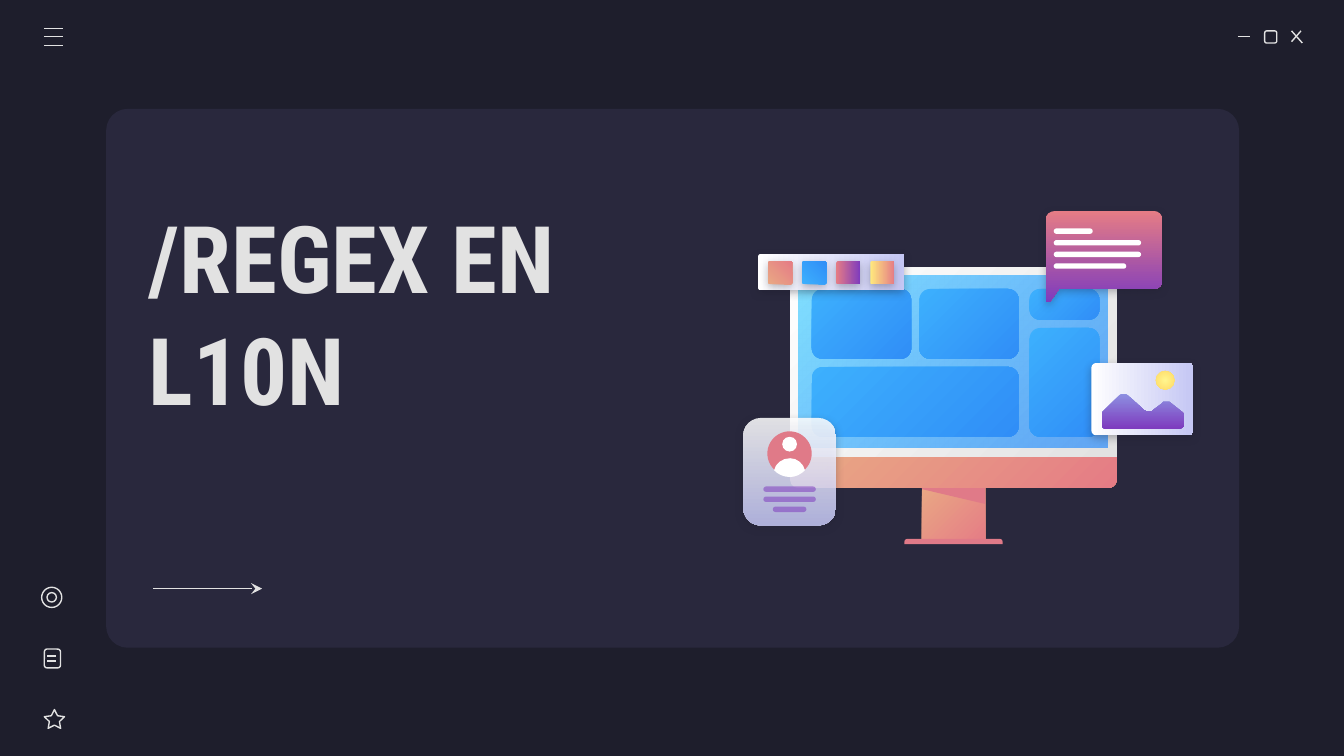
from lxml import etree
from pptx import Presentation
from pptx.dml.color import RGBColor
from pptx.enum.shapes import MSO_CONNECTOR, MSO_SHAPE
from pptx.enum.text import MSO_ANCHOR
from pptx.oxml import parse_xml
from pptx.oxml.ns import nsdecls, qn
from pptx.util import Inches, Pt

RECT, ROUND, OVAL = MSO_SHAPE.RECTANGLE, MSO_SHAPE.ROUNDED_RECTANGLE, MSO_SHAPE.OVAL
TAB, STAR = MSO_SHAPE.ROUND_2_SAME_RECTANGLE, MSO_SHAPE.STAR_5_POINT
STRAIGHT = MSO_CONNECTOR.STRAIGHT
WIDE = 10
HIGH = WIDE * 9 / 16

TITLE = "/REGEX EN L10N"
FONT = {"name": "Roboto Condensed", "size": Pt(50), "bold": True}
INK = {"back": "1E1E2C", "card": "29283D", "pale": "E2E2E2", "rose": "E07A88",
       "white": "FFFFFF", "plum": "7E3BBE"}
# Gradients: start, end, angle, start opacity, end opacity
BLEND = {"peach": ("E9A984", "E57C85", 45, 100, 100),
         "frame": ("FFFFFF", "E2E2E2", 45, 100, 100),
         "glass": ("80DFFF", "318FFA", 45, 100, 72),
         "blue": ("3DB0FD", "308EF7", 45, 100, 100),
         "dusk": ("E57C85", "7E3BBE", 90, 100, 100),
         "mist": ("FFFFFF", "C5C7F4", 90, 86, 86),
         "paper": ("FFFFFF", "C5C7F4", 90, 100, 100),
         "hill": ("8D90E1", "7E3BBE", 90, 100, 100),
         "dawn": ("FFEA7D", "E57C85", 90, 100, 100),
         "sun": ("FFF68E", "FFD966", None, 100, 100)}

# Tiles on the screen: first column, last column, first row, row count
COLS = [(6.04, 0.74), (6.84, 0.74), (7.66, 0.52)]
TOP, STEP, GAP = 2.15, 0.29, 0.06
TILES = [(0, 0, 0, 2), (0, 1, 2, 2), (1, 1, 0, 2), (2, 2, 0, 1), (2, 2, 1, 3)]
NOTES = [0.29, 0.65, 0.65, 0.54]
BARS = [0.39, 0.39, 0.25]
SWATCHES = ["peach", "blue", "dusk", "dawn"]

# Outlines: a pair is a straight side, six numbers are a curve
STAND = [(6.86, 3.61), (6.86, 3.64), (7.33, 3.75), (7.33, 3.61)]
BUBBLE = [(7.85, 1.57), (7.81, 1.57, 7.78, 1.6, 7.78, 1.64), (7.78, 2.24),
          (7.78, 2.25, 7.79, 2.25, 7.8, 2.25), (7.8, 2.25, 7.81, 2.25, 7.81, 2.25),
          (7.88, 2.15), (8.59, 2.15), (8.62, 2.15, 8.65, 2.12, 8.65, 2.09),
          (8.65, 1.64), (8.65, 1.6, 8.62, 1.57, 8.59, 1.57)]
BODY = [(5.88, 3.41), (5.82, 3.41, 5.77, 3.45, 5.76, 3.5),
        (5.79, 3.53, 5.83, 3.55, 5.88, 3.55), (5.92, 3.55, 5.96, 3.53, 5.99, 3.5),
        (5.98, 3.45, 5.93, 3.41, 5.88, 3.41)]
HILLS = [(8.36, 2.93), (8.35, 2.93, 8.34, 2.93, 8.33, 2.94), (8.21, 3.06),
         (8.2, 3.07, 8.2, 3.07, 8.2, 3.08), (8.2, 3.16),
         (8.2, 3.18, 8.21, 3.19, 8.23, 3.19), (8.77, 3.19),
         (8.79, 3.19, 8.81, 3.18, 8.81, 3.16), (8.81, 3.09),
         (8.81, 3.08, 8.8, 3.07, 8.8, 3.07), (8.7, 2.99),
         (8.69, 2.99, 8.68, 2.99, 8.67, 2.99), (8.66, 2.99, 8.65, 2.99, 8.65, 3),
         (8.57, 3.06), (8.56, 3.06, 8.55, 3.06, 8.54, 3.06),
         (8.53, 3.06, 8.52, 3.06, 8.51, 3.05), (8.39, 2.94),
         (8.38, 2.93, 8.37, 2.93, 8.36, 2.93)]


def tint(name):
    return RGBColor.from_string(INK[name])


def fade(color, share):
    if share < 100:
        etree.SubElement(color, qn("a:alpha")).set("val", str(share * 1000))


def paint(shape, fill=None, alpha=100, cast=False):
    """Fill a shape, or give it a thin outline when there is no fill."""
    shape.shadow.inherit = False
    if fill is None:
        shape.fill.background()
        shape.line.color.rgb = tint("pale")
        shape.line.width = Pt(0.75)
        return shape
    shape.line.fill.background()
    if fill in INK:
        shape.fill.solid()
        shape.fill.fore_color.rgb = tint(fill)
        fade(shape._element.spPr.find(".//" + qn("a:srgbClr")), alpha)
    else:
        blend(shape, *BLEND[fill])
    if cast:
        shape._element.spPr.find(qn("a:effectLst")).append(parse_xml(
            f'<a:outerShdw {nsdecls("a")} blurRad="57150" dist="19050" dir="5400000" '
            f'algn="bl" rotWithShape="0"><a:srgbClr val="{INK["back"]}">'
            '<a:alpha val="30000"/></a:srgbClr></a:outerShdw>'))
    return shape


def blend(shape, start, end, angle, *alphas):
    shape.fill.gradient()
    for stop, pos, color in zip(shape.fill.gradient_stops, (0, 1), (start, end)):
        stop.position = pos
        stop.color.rgb = RGBColor.from_string(color)
    for color, share in zip(shape._element.spPr.iter(qn("a:srgbClr")), alphas):
        fade(color, share)
    if angle is None:
        lin = shape._element.spPr.find(".//" + qn("a:lin"))
        lin.getparent().replace(lin, parse_xml(
            f'<a:path {nsdecls("a")} path="circle"><a:fillToRect l="50000" '
            't="50000" r="50000" b="50000"/></a:path>'))
    else:
        shape.fill.gradient_angle = 360 - angle


def block(pen, kind, box, fill=None, adj=(), turn=0, **look):
    shape = pen.add_shape(kind, *map(Inches, box))
    for i, value in enumerate(adj):
        shape.adjustments[i] = value
    shape.rotation = turn
    return paint(shape, fill, **look)


def trace(pen, sides, fill, **look):
    dots = [sides[0]]
    for side in sides[1:]:
        if len(side) == 2:
            dots.append(side)
            continue
        ends = [dots[-1], side[:2], side[2:4], side[4:]]
        for t in (0.25, 0.5, 0.75, 1):
            parts = ((1 - t) ** 3, 3 * t * (1 - t) ** 2, 3 * t * t * (1 - t), t ** 3)
            dots.append(tuple(sum(p * e[k] for p, e in zip(parts, ends)) for k in (0, 1)))
    dots = [(Inches(x), Inches(y)) for x, y in dots]
    form = pen.build_freeform(*dots[0], scale=1.0)
    form.add_line_segments(dots[1:], close=True)
    return paint(form.convert_to_shape(), fill, **look)


def rule(pen, *ends):
    line = pen.add_connector(STRAIGHT, *map(Inches, ends))
    line.line.color.rgb = tint("pale")
    line.line.width = Pt(0.75)
    etree.SubElement(line._element.spPr, qn("a:effectLst"))
    return line


deck = Presentation()
deck.slide_width, deck.slide_height = Inches(WIDE), Inches(HIGH)
slide = deck.slides.add_slide(deck.slide_layouts[6])
slide.background.fill.solid()
slide.background.fill.fore_color.rgb = tint("back")
page = slide.shapes


def group():
    return page.add_group_shape().shapes


# Card and window buttons
block(page, ROUND, (0.79, 0.81, 8.43, 4.01), "card", [0.04])
pen = group()
rule(pen, 9.21, 0.27, 9.3, 0.27)
block(pen, ROUND, (9.41, 0.23, 0.09, 0.09))
rule(pen, 9.61, 0.23, 9.69, 0.32)
rule(pen, 9.68, 0.23, 9.61, 0.31)

# Title
frame = page.add_textbox(*map(Inches, (1.01, 1.44, 4.63, 1.76))).text_frame
frame.word_wrap, frame.vertical_anchor = True, MSO_ANCHOR.MIDDLE
for edge in ("left", "right", "top", "bottom"):
    setattr(frame, "margin_" + edge, Inches(0.1))
run = frame.paragraphs[0].add_run()
run.text = TITLE
for key, value in FONT.items():
    setattr(run.font, key, value)
run.font.color.rgb = tint("pale")

# Monitor
pen = group()
block(pen, RECT, (6.86, 3.61, 0.47, 0.43), "peach")
block(pen, TAB, (6.73, 4.01, 0.73, 0.04), "rose", [0.5, 0])
trace(pen, STAND, "rose")
block(pen, TAB, (5.88, 3.39, 2.43, 0.24), "peach", [0, 0.25])
block(pen, TAB, (5.88, 1.99, 2.43, 1.41), "frame", [0.04, 0])
block(pen, RECT, (5.94, 2.05, 2.3, 1.28), "glass")
for first, last, row, count in TILES:
    left = COLS[first][0]
    wide, tall = sum(COLS[last]) - left, count * STEP - GAP
    block(pen, ROUND, (left, TOP + row * STEP, wide, tall), "blue",
          [0.08 / min(wide, tall)])

# Speech bubble
pen = group()
trace(pen, BUBBLE, "dusk", cast=True)
for i, wide in enumerate(NOTES):
    block(pen, ROUND, (7.84, 1.7 + i * 0.26 / 3, wide, 0.04), "white", [0.5])

# Menu
pen = group()
for y in (0.21, 0.27, 0.34):
    rule(pen, 0.33, y, 0.47, y)

# Profile card
pen = group()
block(pen, ROUND, (5.53, 3.11, 0.69, 0.8), "mist", [0.19], cast=True)
block(pen, OVAL, (5.71, 3.21, 0.33, 0.33), "rose")
block(pen, OVAL, (5.82, 3.25, 0.11, 0.11), "white")
trace(pen, BODY, "white")
for i, wide in enumerate(BARS):
    block(pen, ROUND, (5.53 + (0.69 - wide) / 2, 3.62 + i * 0.15 / 2, wide, 0.04),
          "plum", [0.5], alpha=54)

# Landscape card
pen = group()
block(pen, ROUND, (8.23, 2.59, 0.54, 0.76), "paper", [0.07], 270, cast=True)
trace(pen, HILLS, "hill")
block(pen, OVAL, (8.6, 2.76, 0.14, 0.14), "sun")

# Palette
pen = group()
block(pen, ROUND, (6.05, 1.48, 0.27, 1.09), "paper", [0.07], 270, cast=True)
for i, fill in enumerate(SWATCHES):
    block(pen, ROUND, (5.72 + i * 0.76 / 3, 1.94, 0.17, 0.18), fill, [0.07], 270, cast=True)

# Side icons
pen = group()
block(pen, STAR, (0.33, 5.28, 0.15, 0.14), adj=[0.25])
block(pen, ROUND, (0.33, 4.83, 0.12, 0.14))
for y in (4.88, 4.92):
    rule(pen, 0.35, y, 0.42, y)
for inset in (0, 0.04):
    size = 0.15 - 2 * inset
    block(pen, OVAL, (0.31 + inset, 4.37 + inset, size, size))

# Arrow
arrow = rule(page, 1.14, 4.38, 1.95, 4.38)
etree.SubElement(arrow.line._get_or_add_ln(), qn("a:tailEnd")).set("type", "stealth")

deck.save("out.pptx")
